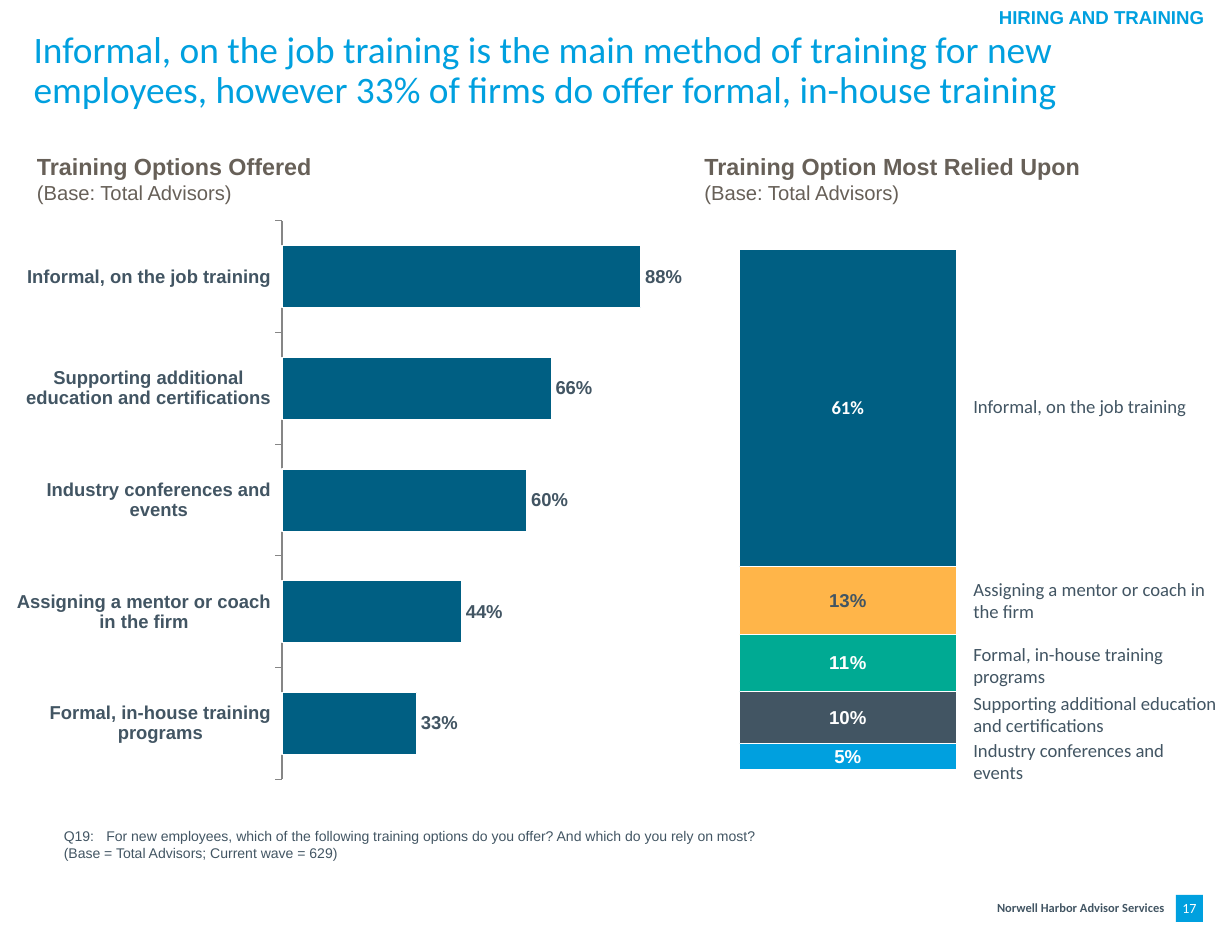
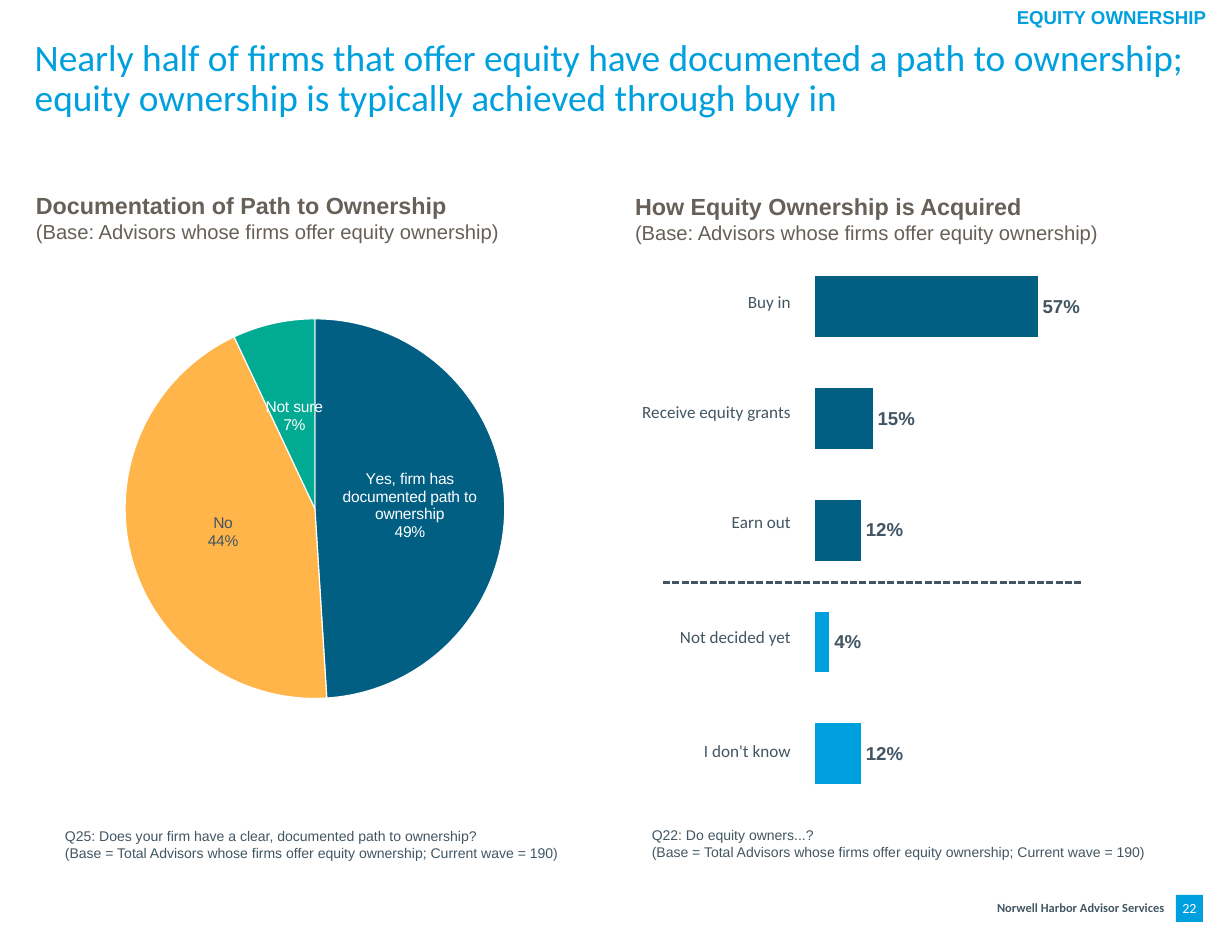
from dataclasses import dataclass
from typing import Any, NamedTuple

from lxml.etree import SubElement
from pptx import Presentation
from pptx.chart.chart import Chart
from pptx.chart.data import CategoryChartData
from pptx.dml.color import RGBColor
from pptx.enum.chart import XL_CHART_TYPE, XL_LABEL_POSITION, XL_TICK_LABEL_POSITION, XL_TICK_MARK
from pptx.enum.dml import MSO_LINE
from pptx.enum.shapes import MSO_CONNECTOR, MSO_SHAPE
from pptx.enum.text import MSO_ANCHOR, MSO_AUTO_SIZE, PP_ALIGN
from pptx.oxml.ns import qn
from pptx.slide import Slide
from pptx.text.text import Font, TextFrame
from pptx.util import Emu, Pt

SCALE = 9144  # EMU per px, 100 px to the inch


def px(count: int) -> Emu:
    return Emu(count * SCALE)


class Type(NamedTuple):
    face: str
    size: float
    color: str
    bold: bool = False


@dataclass(frozen=True)
class Theme:
    white: str = "FFFFFF"
    sky: str = "00A0DF"
    navy: str = "005F83"
    slate: str = "425563"
    green: str = "00AA93"
    amber: str = "FFB549"
    axis: str = "868686"
    title: Type = Type("Calibri", 24, "00A0DF")
    tag: Type = Type("Arial", 12, "00A0DF", True)
    head: Type = Type("Arial", 15, "676058", True)
    base: Type = Type("Arial", 13, "676058")
    note: Type = Type("Arial", 9, "425563")
    brand: Type = Type("Calibri", 8, "425563", True)
    page: Type = Type("Calibri", 9, "FFFFFF")
    key: Type = Type("Calibri", 12, "425563")
    row: Type = Type("Calibri", 11, "425563")
    value: Type = Type("Arial", 12, "425563", True)
    light: Type = Type("Arial", 12, "FFFFFF", True)
    lead: Type = Type("Calibri", 12, "FFFFFF", True)
    slice: Type = Type("Arial", 10, "FFFFFF")
    shade: Type = Type("Arial", 10, "425563")


THEME = Theme()


class Box(NamedTuple):
    left: int
    top: int
    width: int
    height: int

    def emu(self) -> list[Emu]:
        return [px(side) for side in self]


class Line(NamedTuple):
    text: str
    type: Type


class Band(NamedTuple):
    value: float
    color: str
    type: Type


class Key(NamedTuple):
    top: int
    text: str


def put(target: Any, values: dict[str, Any]) -> None:
    for name, value in values.items():
        setattr(target, name, value)


def style(font: Font, kind: Type) -> None:
    put(font, {"name": kind.face, "size": Pt(kind.size), "bold": kind.bold})
    font.color.rgb = RGBColor.from_string(kind.color)


def pad(left: int = 0, top: int = 0, right: int = 0, bottom: int = 0) -> dict[str, Emu]:
    return {"margin_left": px(left), "margin_top": px(top),
            "margin_right": px(right), "margin_bottom": px(bottom)}


def write(frame: TextFrame, lines: list[Line], form: dict[str, Any], **para: Any) -> None:
    """Fill a frame with one paragraph per line; form formats the frame."""
    put(frame, {"word_wrap": True, "auto_size": MSO_AUTO_SIZE.NONE,
                "vertical_anchor": MSO_ANCHOR.TOP} | form)
    for index, line in enumerate(lines):
        item = frame.add_paragraph() if index else frame.paragraphs[0]
        put(item, {"alignment": PP_ALIGN.LEFT} | para)
        run = item.add_run()
        run.text = line.text
        style(run.font, line.type)


def label(slide: Slide, box: Box, lines: list[Line], form: dict[str, Any], **para: Any) -> TextFrame:
    frame = slide.shapes.add_textbox(*box.emu()).text_frame
    write(frame, lines, form, **para)
    return frame


def header(slide: Slide, box: Box, title: str, base: str) -> None:
    label(slide, box, [Line(title, THEME.head), Line(base, THEME.base)], pad(0, 0, 11, 6))


def note(slide: Slide, box: Box, *texts: str) -> TextFrame:
    return label(slide, box, [Line(text, THEME.note) for text in texts], pad(11, 6, 11, 6))


def start(deck: Any, title: str, spot: Box, tag: str, place: Box, page: int) -> Slide:
    """Add a slide with its title, section tag and footer."""
    slide = deck.slides.add_slide(deck.slide_layouts[5])
    head = slide.shapes.title
    put(head, dict(zip(("left", "top", "width", "height"), spot.emu())))
    write(head.text_frame, [Line(title, THEME.title)], pad(), line_spacing=0.9)
    label(slide, place, [Line(tag, THEME.tag)], {"word_wrap": False}, space_before=Pt(4.4))
    mid = pad() | {"vertical_anchor": MSO_ANCHOR.MIDDLE, "word_wrap": False}
    label(slide, Box(813, 799, 227, 24), [Line("Norwell Harbor Advisor Services", THEME.brand)],
          mid, alignment=PP_ALIGN.RIGHT, line_spacing=0.95)
    tile = slide.shapes.add_shape(MSO_SHAPE.RECTANGLE, *Box(1050, 799, 24, 24).emu())
    tile.shadow.inherit = False
    tile.fill.solid()
    tile.fill.fore_color.rgb = RGBColor.from_string(THEME.sky)
    tile.line.fill.background()
    write(tile.text_frame, [Line(str(page), THEME.page)], mid, alignment=PP_ALIGN.CENTER)
    return slide


def paint(part: Any, color: str) -> None:
    """Fill a series or point and give it a thin white edge."""
    part.format.fill.solid()
    part.format.fill.fore_color.rgb = RGBColor.from_string(color)
    part.format.line.color.rgb = RGBColor.from_string(THEME.white)
    part.format.line.width = Pt(0.75)


def mark(labels: Any, kind: Type) -> None:
    put(labels, {"show_value": True, "number_format": "0%", "number_format_is_linked": False})
    style(labels.font, kind)


def place(chart: Chart, area: tuple[float, ...]) -> None:
    """Fix the inner plot area as x, y, width and height shares."""
    plot = chart.element.find(".//" + qn("c:plotArea"))
    for old in plot.findall(qn("c:layout")):
        plot.remove(old)
    frame = SubElement(plot, qn("c:layout"))
    plot.insert(0, frame)
    manual = SubElement(frame, qn("c:manualLayout"))
    names = ("layoutTarget", "xMode", "yMode", "x", "y", "w", "h")
    for name, value in zip(names, ("inner", "edge", "edge", *area)):
        SubElement(manual, qn(f"c:{name}")).set("val", str(value))


def graph(slide: Slide, kind: XL_CHART_TYPE, box: Box, area: tuple[float, ...],
          cats: list[str], *rows: list[float]) -> Chart:
    data = CategoryChartData(number_format="0%")
    data.categories = cats
    for index, row in enumerate(rows, 1):
        data.add_series(f"Series {index}", row)
    chart = slide.shapes.add_chart(kind, *box.emu(), data).chart
    put(chart, {"has_legend": False, "has_title": False})
    style(chart.font, THEME.value)
    chart.plots[0].vary_by_categories = False
    place(chart, area)
    return chart


def bars(slide: Slide, box: Box, area: tuple[float, ...], cats: list[str],
         values: list[float]) -> Chart:
    chart = graph(slide, XL_CHART_TYPE.BAR_CLUSTERED, box, area, cats, values)
    plot = chart.plots[0]
    plot.gap_width = 80
    paint(plot.series[0], THEME.navy)
    mark(plot.series[0].data_labels, THEME.value)
    plot.series[0].data_labels.position = XL_LABEL_POSITION.OUTSIDE_END
    put(chart.value_axis, {"visible": False, "has_major_gridlines": False,
                           "minimum_scale": 0, "maximum_scale": 1})
    chart.category_axis.reverse_order = True
    return chart


def stack(slide: Slide, box: Box, bands: list[Band]) -> None:
    chart = graph(slide, XL_CHART_TYPE.COLUMN_STACKED_100, box, (0, 0, 1, 1), ["1"],
                  *[[band.value] for band in bands])
    plot = chart.plots[0]
    put(plot, {"gap_width": 100, "overlap": 100})
    for part, band in zip(plot.series, bands):
        paint(part, band.color)
        mark(part.data_labels, band.type)
    for axis in (chart.category_axis, chart.value_axis):
        put(axis, {"visible": False, "has_major_gridlines": False})


def pie(slide: Slide, box: Box, area: tuple[float, ...], cats: list[str],
        bands: list[Band]) -> None:
    chart = graph(slide, XL_CHART_TYPE.PIE, box, area, cats, [band.value for band in bands])
    series = chart.plots[0].series[0]
    mark(series.data_labels, THEME.slice)
    series.data_labels.position = XL_LABEL_POSITION.CENTER
    for index, band in enumerate(bands):
        point = series.points[index]
        paint(point, band.color)
        style(point.data_label.font, band.type)
        point.data_label.position = XL_LABEL_POSITION.CENTER
    for flag in chart.element.iter(qn("c:showCatName")):
        flag.set("val", "1")
    for flag in list(chart.element.iter(qn("c:showBubbleSize"))):
        split = SubElement(flag.getparent(), qn("c:separator"))
        split.text = "\n"
        flag.addnext(split)


def names(slide: Slide, box: Box, heights: list[int], texts: list[str]) -> None:
    """Draw a plain table of right-aligned row names."""
    table = slide.shapes.add_table(len(texts), 1, *box.emu()).table
    put(table, {"first_row": False, "horz_banding": False})
    for index, (height, text) in enumerate(zip(heights, texts)):
        table.rows[index].height = px(height)
        cell = table.cell(index, 0)
        cell.fill.background()
        put(cell, pad(1, 1, 1, 0) | {"vertical_anchor": MSO_ANCHOR.MIDDLE})
        item = cell.text_frame.paragraphs[0]
        item.alignment = PP_ALIGN.RIGHT
        run = item.add_run()
        run.text = text
        style(run.font, THEME.row)


def dashes(slide: Slide, left: int, right: int, top: int) -> None:
    rule = slide.shapes.add_connector(MSO_CONNECTOR.STRAIGHT, px(left), px(top), px(right), px(top))
    rule.line.color.rgb = RGBColor.from_string(THEME.slate)
    put(rule.line, {"width": Pt(1.5), "dash_style": MSO_LINE.SQUARE_DOT})
    SubElement(rule.element.spPr, qn("a:effectLst"))


def training(deck: Any) -> None:
    slide = start(deck, "Informal, on the job training is the main method of training for new "
                  "employees, however 33% of firms do offer formal, in-house training",
                  Box(30, 28, 1048, 73), "HIRING AND TRAINING", Box(882, 0, 206, 30), 17)
    header(slide, Box(33, 136, 430, 53), "Training Options Offered", "(Base: Total Advisors)")
    header(slide, Box(629, 136, 400, 53), "Training Option Most Relied Upon",
           "(Base: Total Advisors)")
    frame = note(slide, Box(46, 733, 1034, 41),
                 "Q19:\tFor new employees, which of the following training options do you offer? "
                 "And which do you rely on most?", "(Base = Total Advisors; Current wave = 629)")
    tabs = SubElement(frame.paragraphs[0]._p.get_or_add_pPr(), qn("a:tabLst"))
    SubElement(tabs, qn("a:tab"), pos=str(px(38)), algn="l")

    job, mentor, formal, study, events = (
        "Informal, on the job training", "Assigning a mentor or coach in the firm",
        "Formal, in-house training programs", "Supporting additional education and certifications",
        "Industry conferences and events")
    chart = bars(slide, Box(15, 188, 601, 545), (0.387, 0.017, 0.613, 0.915),
                 [job, study, events, mentor, formal], [0.88, 0.66, 0.6, 0.44, 0.33])
    axis = chart.category_axis
    put(axis, {"major_tick_mark": XL_TICK_MARK.OUTSIDE, "has_major_gridlines": False,
               "tick_label_position": XL_TICK_LABEL_POSITION.NEXT_TO_AXIS})
    axis.format.line.color.rgb = RGBColor.from_string(THEME.axis)

    stack(slide, Box(563, 222, 388, 466), [
        Band(0.05, THEME.sky, THEME.light), Band(0.1, THEME.slate, THEME.light),
        Band(0.11, THEME.green, THEME.light), Band(0.13, THEME.amber, THEME.value),
        Band(0.61, THEME.navy, THEME.lead)])
    for key in (Key(343, job), Key(516, mentor), Key(574, formal), Key(618, study),
                Key(660, events)):
        label(slide, Box(869, key.top, 218, 39), [Line(key.text, THEME.key)],
              pad() | {"vertical_anchor": MSO_ANCHOR.MIDDLE})


def equity(deck: Any) -> None:
    slide = start(deck, "Nearly half of firms that offer equity have documented a path to "
                  "ownership; equity ownership is typically achieved through buy in",
                  Box(31, 35, 1048, 73), "EQUITY OWNERSHIP", Box(898, 0, 191, 30), 22)
    base = "(Base: Advisors whose firms offer equity ownership)"
    header(slide, Box(32, 171, 449, 53), "Documentation of Path to Ownership", base)
    header(slide, Box(567, 172, 496, 53), "How Equity Ownership is Acquired", base)
    wave = "(Base = Total Advisors whose firms offer equity ownership; Current wave = 190)"
    note(slide, Box(47, 733, 471, 41),
         "Q25: Does your firm have a clear, documented path to ownership?", wave)
    note(slide, Box(571, 732, 504, 41), "Q22: Do equity owners...?", wave)

    pie(slide, Box(-111, 221, 696, 501), (0.32, 0.124, 0.487, 0.683),
        ["Yes, firm has documented path to ownership", "No", "Not sure"],
        [Band(0.49, THEME.navy, THEME.slice), Band(0.44, THEME.amber, THEME.shade),
         Band(0.07, THEME.green, THEME.slice)])
    chart = bars(slide, Box(701, 215, 377, 545), (0.069, 0.017, 0.931, 0.915),
                 list("12345"), [0.57, 0.15, 0.12, 0.04, 0.12])
    chart.category_axis.visible = False
    for index in (3, 4):
        paint(chart.plots[0].series[0].points[index], THEME.sky)
    names(slide, Box(502, 221, 205, 498), [98, 98, 98, 107, 98],
          ["Buy in", "Receive equity grants", "Earn out", "Not decided yet", "I don't know"])
    dashes(slide, 592, 966, 520)


def main() -> None:
    deck = Presentation()
    put(deck, {"slide_width": px(1100), "slide_height": px(833)})
    training(deck)
    equity(deck)
    deck.save("out.pptx")


if __name__ == "__main__":
    main()
